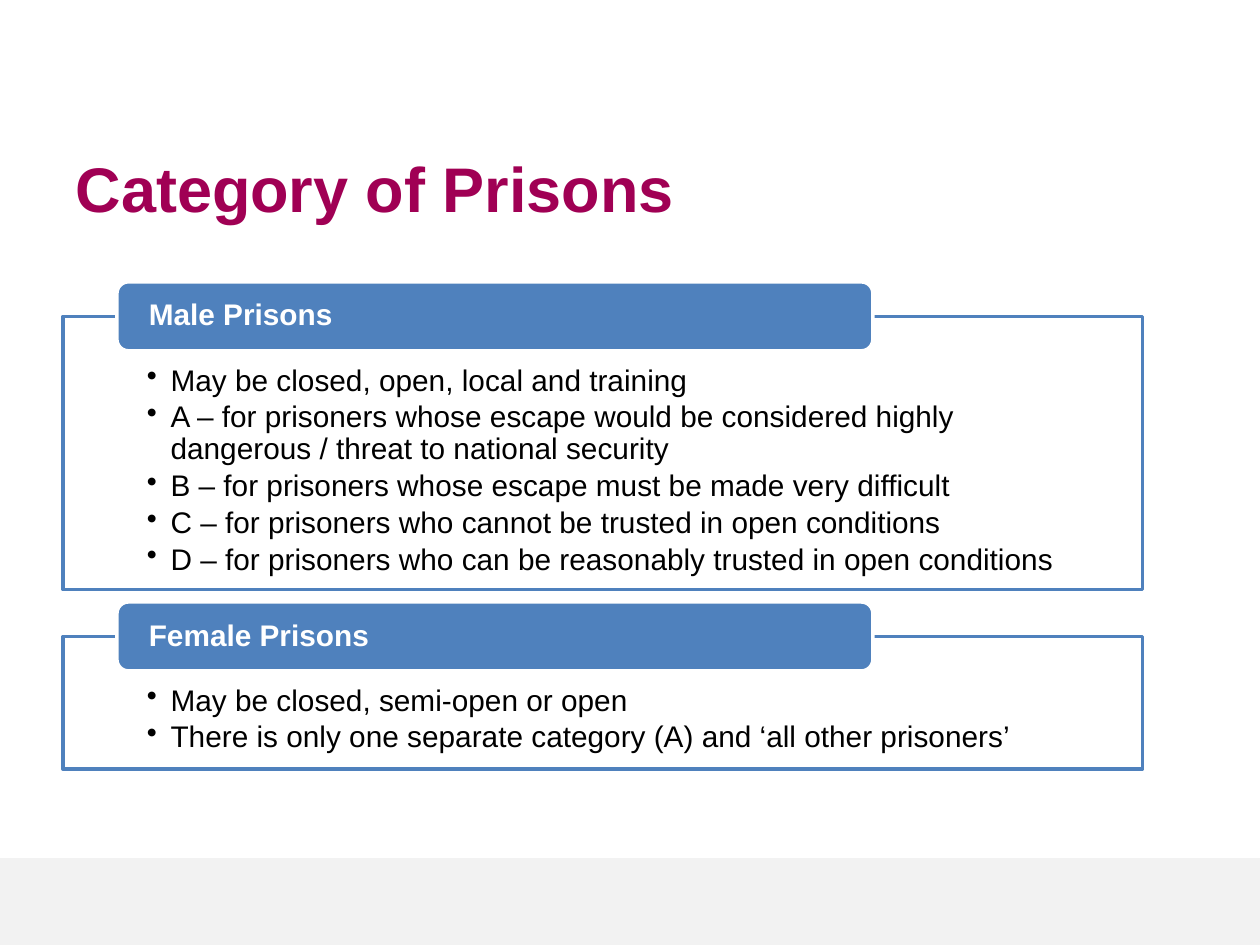
from lxml.etree import SubElement
from pptx import Presentation
from pptx.dml.color import RGBColor
from pptx.enum.shapes import MSO_SHAPE as SHAPE
from pptx.enum.text import MSO_ANCHOR as ANCHOR, PP_ALIGN as ALIGN
from pptx.oxml.ns import qn
from pptx.util import Pt

TITLE = "Category of Prisons"
CATEGORIES = [
    ("Male Prisons", 156.2, [
        "May be closed, open, local and training",
        "A – for prisoners whose escape would be considered highly "
        "dangerous / threat to national security",
        "B – for prisoners whose escape must be made very difficult",
        "C – for prisoners who cannot be trusted in open conditions",
        "D – for prisoners who can be reasonably trusted in open conditions",
    ]),
    ("Female Prisons", 75.7, [
        "May be closed, semi-open or open",
        "There is only one separate category (A) and ‘all other prisoners’",
    ]),
]

FONT = "Arial"
PLUM = RGBColor(0xA0, 0x00, 0x54)
BLUE = RGBColor(0x4F, 0x81, 0xBD)
GREY = RGBColor(0xF2, 0xF2, 0xF2)
WHITE = RGBColor(0xFF, 0xFF, 0xFF)
BLACK = RGBColor(0x00, 0x00, 0x00)

SLIDE_W, SLIDE_H = 720, 540
BAND_H = 49.7
FRAME_X, FRAME_W, FIRST_Y, GAP = 36, 617, 180.8, 26.7
HEADER_X, HEADER_W, HEADER_H = 66.85, 432, 39.4
INDENT = 13.5


def add_box(slide, kind, x, y, w, h, fill, line=None):
    sp = slide.shapes.add_shape(kind, Pt(x), Pt(y), Pt(w), Pt(h))
    sp.shadow.inherit = False
    sp.fill.solid()
    sp.fill.fore_color.rgb = fill
    if line is None:
        sp.line.fill.background()
    else:
        sp.line.color.rgb = line
        sp.line.width = Pt(2)
    return sp


def write(sp, lines, size=17, color=BLACK, bold=False, anchor=ANCHOR.MIDDLE,
          insets=(7.2, 3.6, 7.2, 3.6), spacing=0.9, after=0, bullet=False):
    tf = sp.text_frame
    tf.word_wrap = True
    tf.vertical_anchor = anchor
    tf.margin_left, tf.margin_top, tf.margin_right, tf.margin_bottom = map(Pt, insets)
    for i, text in enumerate(lines):
        p = tf.add_paragraph() if i else tf.paragraphs[0]
        p.alignment = ALIGN.LEFT
        p.line_spacing = spacing
        p.space_after = Pt(after)
        if bullet:
            pPr = p._p.get_or_add_pPr()
            pPr.set("marL", str(Pt(INDENT)))
            pPr.set("indent", str(-Pt(INDENT)))
            SubElement(pPr, qn("a:buChar"), char="•")
        r = p.add_run()
        r.text = text
        r.font.name = FONT
        r.font.size = Pt(size)
        r.font.bold = bold
        r.font.color.rgb = color


def main():
    prs = Presentation()
    prs.slide_width, prs.slide_height = Pt(SLIDE_W), Pt(SLIDE_H)
    slide = prs.slides.add_slide(prs.slide_layouts[5])

    add_box(slide, SHAPE.RECTANGLE, 0, SLIDE_H - BAND_H, SLIDE_W, BAND_H, GREY)

    title = slide.shapes.title
    title.left, title.top, title.width, title.height = map(Pt, (36, 80.6, 612, 53.3))
    write(title, [TITLE], size=36, color=PLUM, bold=True, spacing=1.0)

    y = FIRST_Y
    for name, height, points in CATEGORIES:
        frame = add_box(slide, SHAPE.RECTANGLE, FRAME_X, y, FRAME_W, height, WHITE, BLUE)
        write(frame, points, anchor=ANCHOR.TOP, insets=(48, 28, 48, 9),
              after=2.6, bullet=True)
        header = add_box(slide, SHAPE.ROUNDED_RECTANGLE, HEADER_X, y - HEADER_H / 2,
                         HEADER_W, HEADER_H, BLUE, WHITE)
        write(header, [name], color=WHITE, bold=True, insets=(16.3, 0, 16.3, 0))
        y += height + GAP

    prs.save("out.pptx")


if __name__ == "__main__":
    main()
